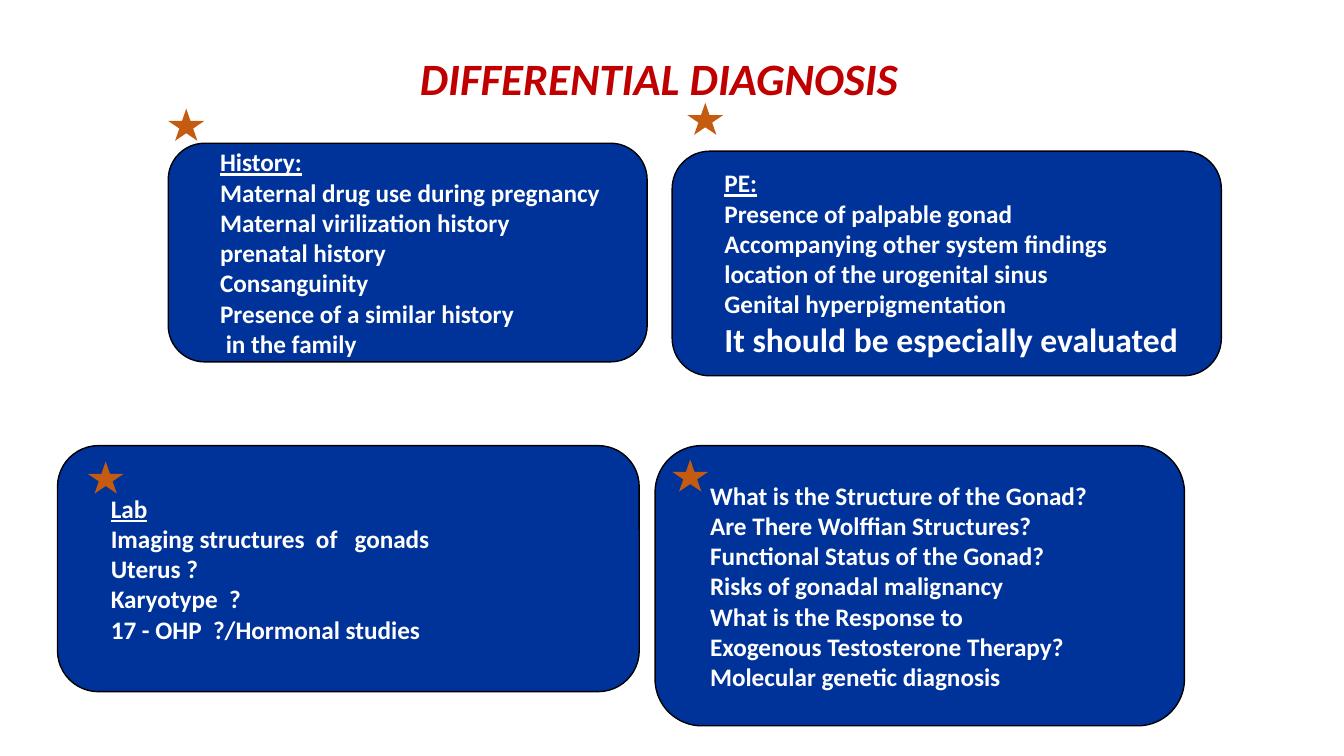
import pptx
import pptx.util
import pptx.dml.color
import pptx.enum.shapes
import pptx.enum.text

Cm = pptx.util.Cm
Pt = pptx.util.Pt
Kind = pptx.enum.shapes.MSO_SHAPE
Align = pptx.enum.text.PP_ALIGN


def color(code):
    return pptx.dml.color.RGBColor.from_string(code)


def write(para, text, size=18, ink="FFFFFF", under=False, slant=False,
          align=Align.LEFT, indent=0):
    para.alignment = align
    if indent:
        props = para._p.get_or_add_pPr()
        props.set("marL", str(Cm(indent)))
        props.set("indent", "0")
    run = para.add_run()
    run.text = text
    font = run.font
    font.name = "Calibri"
    font.size = Pt(size)
    font.bold = True
    font.italic = slant
    font.underline = under
    font.color.rgb = color(ink)


deck = pptx.Presentation()
deck.slide_width = Cm(33.87)
deck.slide_height = Cm(19.05)
slide = deck.slides.add_slide(deck.slide_layouts[5])

# Title
title = slide.shapes.title
title.left, title.top = Cm(9.27), Cm(0.74)
title.width, title.height = Cm(14.68), Cm(2.41)
title.text_frame.vertical_anchor = pptx.enum.text.MSO_ANCHOR.MIDDLE
write(title.text_frame.paragraphs[0], "DIFFERENTIAL DIAGNOSIS",
      size=32, ink="C00000", slant=True, align=Align.CENTER)

# Panels: place, star corner, heading, lines
panels = [
    ((1.45, 11.23, 14.66, 6.2), (2.21, 11.63), "Lab", [
        "Imaging structures  of   gonads",
        "Uterus ?",
        "Karyotype  ?",
        "17 - OHP  ?/Hormonal studies"]),
    ((16.51, 11.23, 13.34, 7.06), (16.94, 11.58), None, [
        "What is the Structure of the Gonad?",
        "Are There Wolffian Structures?",
        "Functional Status of the Gonad?",
        "Risks of gonadal malignancy",
        "What is the Response to",
        "Exogenous Testosterone Therapy?",
        "Molecular genetic diagnosis"]),
    ((4.24, 3.61, 12.07, 5.51), (4.24, 2.74), "History:", [
        "Maternal drug use during pregnancy",
        "Maternal virilization history",
        "prenatal history",
        "Consanguinity",
        "Presence of a similar history",
        " in the family"]),
    ((16.94, 3.81, 13.84, 5.66), (17.32, 2.59), "PE:", [
        "Presence of palpable gonad",
        "Accompanying other system findings",
        "location of the urogenital sinus",
        "Genital hyperpigmentation",
        "It should be especially evaluated"]),
]

for place, corner, head, lines in panels:
    # Rounded box
    box = slide.shapes.add_shape(Kind.ROUNDED_RECTANGLE, *map(Cm, place))
    box.shadow.inherit = False
    box.fill.solid()
    box.fill.fore_color.rgb = color("003399")
    box.line.color.rgb = color("000000")
    box.line.width = Pt(1)

    # Text, with the heading underlined
    frame = box.text_frame
    frame.word_wrap = True
    frame.vertical_anchor = pptx.enum.text.MSO_ANCHOR.MIDDLE
    rows = [head] + lines if head else lines
    for i, row in enumerate(rows):
        para = frame.add_paragraph() if i else frame.paragraphs[0]
        size = 24 if row.startswith("It should") else 18
        write(para, row, size=size, under=row == head, indent=0.79)

    # Star
    star = slide.shapes.add_shape(Kind.STAR_5_POINT, *map(Cm, corner),
                                  Cm(0.91), Cm(0.81))
    star.shadow.inherit = False
    star.fill.solid()
    star.fill.fore_color.rgb = color("C55A11")
    star.line.fill.background()

deck.save("out.pptx")
